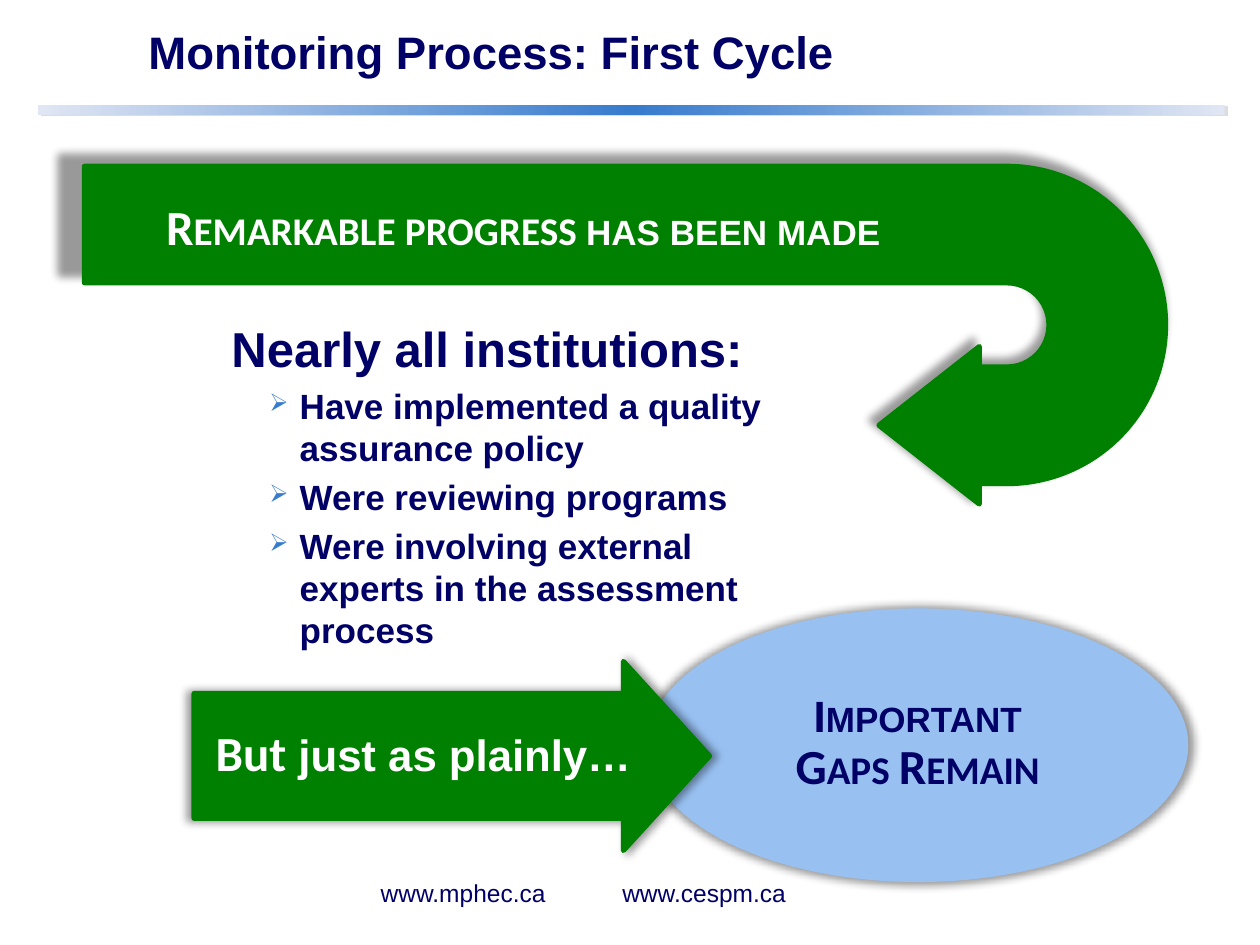
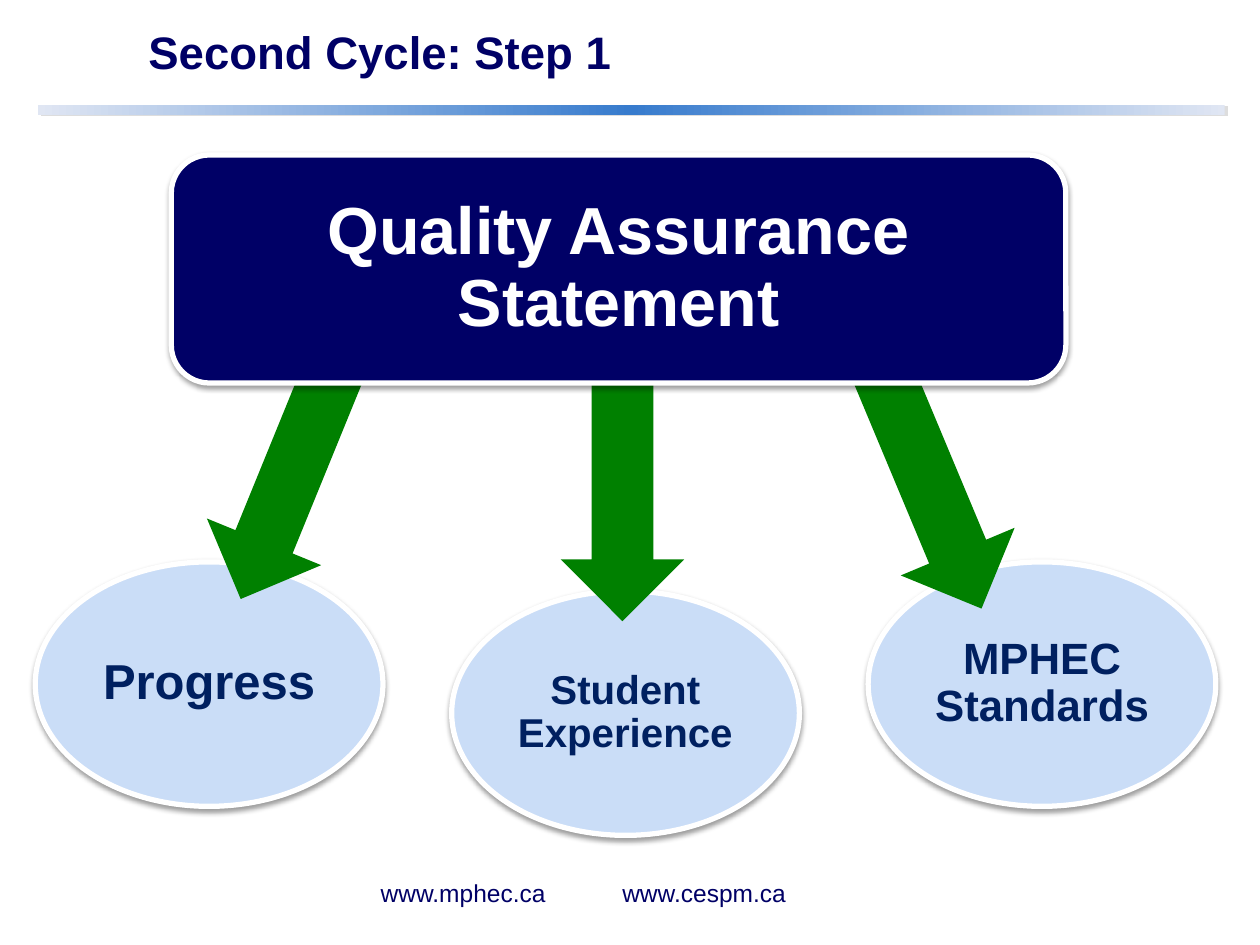
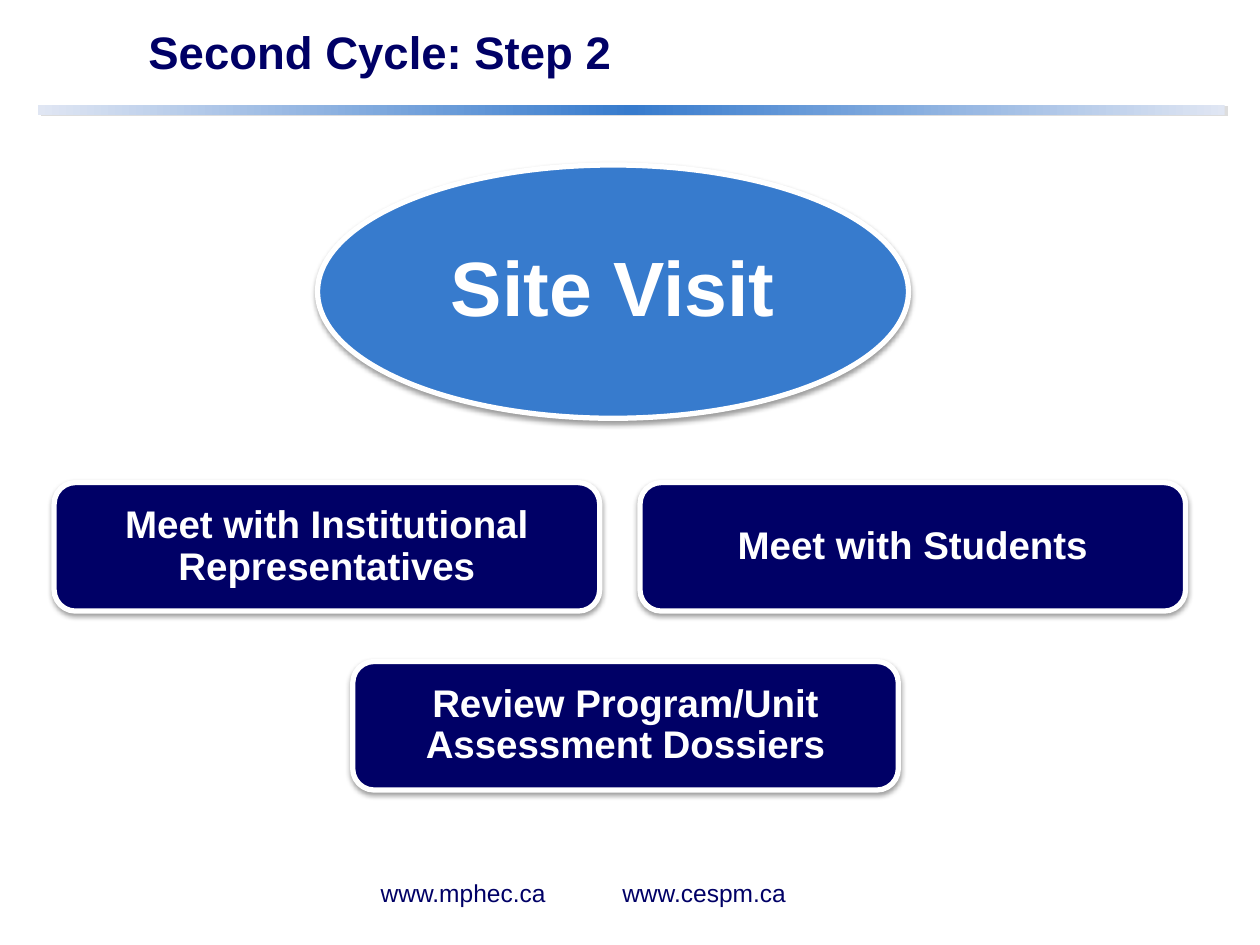
import pptx
import pptx.util
import pptx.dml.color
import pptx.enum.shapes
import pptx.enum.text
import pptx.oxml
import pptx.oxml.ns
from dataclasses import dataclass

Pt = pptx.util.Pt
Kind = pptx.enum.shapes.MSO_SHAPE
Align = pptx.enum.text.PP_ALIGN
Mid = pptx.enum.text.MSO_ANCHOR.MIDDLE
NS = pptx.oxml.ns.nsdecls("a")

WIDTH, HEIGHT = pptx.util.Inches(10), pptx.util.Inches(7.5)
COLS, ROWS = 100, 75


@dataclass(frozen=True)
class Theme:
    navy: str = "000066"
    ink: str = "002060"
    blue: str = "377BCD"
    sky: str = "98C1F2"
    pale: str = "CADDF7"
    mist: str = "E0E6F3"
    green: str = "008000"
    white: str = "FFFFFF"
    sans: str = "Arial"
    alt: str = "Calibri"
    title: int = 26
    lead: int = 28
    body: int = 20
    call: int = 25
    box: int = 22
    foot: int = 14
    edge: int = 3
    tight: float = 0.9


T = Theme()
# Shadows: colour, opacity %, blur pt, distance pt, angle, scale %
GLOW = ("000000", 40, 5, 0, 0, 102)
DROP = ("000000", 38, 3.1, 1.6, 90, 100)
BAND = ("DDDDDD", 100, 0, 2.2, 27, 100)


# --- basics ---
def rgb(code):
    return pptx.dml.color.RGBColor.from_string(code)


def place(left, top, wide, high):
    """Turn grid columns and rows into lengths."""
    col, row = WIDTH / COLS, HEIGHT / ROWS
    return [round(n) for n in (left * col, top * row, wide * col, high * row)]


def shade(shape, look):
    tint, alpha, blur, dist, angle, scale = look
    shape._element.spPr.append(pptx.oxml.parse_xml(
        f'<a:effectLst {NS}><a:outerShdw blurRad="{Pt(blur)}" dist="{Pt(dist)}" '
        f'dir="{angle * 60000}" sx="{scale * 1000}" sy="{scale * 1000}" '
        f'algn="ctr" rotWithShape="0"><a:srgbClr val="{tint}">'
        f'<a:alpha val="{alpha * 1000}"/></a:srgbClr></a:outerShdw></a:effectLst>'))


# --- text ---
def run(text, size, tint=T.navy, font=T.sans, bold=True, small=False):
    return text, size, tint, font, bold, small


def write(para, runs, align=Align.LEFT, space=None):
    para.alignment = align
    if space:
        para.line_spacing = space
    for text, size, tint, name, bold, small in runs:
        part = para.add_run()
        part.text = text
        font = part.font
        font.size, font.name, font.bold = Pt(size), name, bold
        font.color.rgb = rgb(tint)
        if small:
            font._element.set("cap", "small")


def fill_text(frame, paras, **style):
    frame.word_wrap = True
    for i, runs in enumerate(paras):
        para = frame.add_paragraph() if i else frame.paragraphs[0]
        write(para, runs, **style)


def label(slide, at, *paras, **style):
    frame = slide.shapes.add_textbox(*place(*at)).text_frame
    fill_text(frame, paras, **style)
    return frame


def bullet(frame, text):
    para = frame.add_paragraph()
    props = para._p.get_or_add_pPr()
    props.set("marL", str(pptx.util.Inches(0.74)))
    props.set("indent", str(pptx.util.Inches(-0.24)))
    for xml in (f'<a:buClr {NS}><a:srgbClr val="{T.blue}"/></a:buClr>',
                f'<a:buSzPct {NS} val="70000"/>',
                f'<a:buChar {NS} char="➢"/>'):
        props.append(pptx.oxml.parse_xml(xml))
    para.space_before = Pt(T.body * 0.2)
    write(para, [run(text, T.body)])


# --- shapes ---
def form(slide, kind, at, tint, paras=(), edge=None, look=None, turn=0, adj=()):
    shape = slide.shapes.add_shape(kind, *place(*at))
    shape.rotation = turn
    for i, value in enumerate(adj):
        shape.adjustments[i] = value
    shape.fill.solid()
    shape.fill.fore_color.rgb = rgb(tint)
    if edge:
        shape.line.color.rgb = rgb(edge)
        shape.line.width = Pt(T.edge)
        shape.line._ln.append(pptx.oxml.parse_xml(f"<a:round {NS}/>"))
    else:
        shape.line.fill.background()
    if look:
        shade(shape, look)
    else:
        shape.shadow.inherit = False
    if paras:
        frame = shape.text_frame
        frame.vertical_anchor = Mid
        frame.margin_left = frame.margin_right = pptx.util.Inches(0.05)
        fill_text(frame, paras, align=Align.CENTER, space=T.tight)
    return shape


def card(slide, kind, at, tint, lines, size, ink=T.white):
    paras = [[run(line, size, ink)] for line in lines]
    form(slide, kind, at, tint, paras, T.white, DROP)


def page(deck, title):
    """Add a slide with the shared title, band and footer."""
    slide = deck.slides.add_slide(deck.slide_layouts[6])
    band = form(slide, Kind.RECTANGLE, (3, 8.3, 94.2, 0.8), T.blue)
    band.fill.gradient()
    band.fill.gradient_angle = 0
    stops = band.fill._fill._gradFill.gsLst
    stops.clear()
    for spot, tint in ((0, T.mist), (50, T.blue), (100, T.mist)):
        stops.append(pptx.oxml.parse_xml(
            f'<a:gs {NS} pos="{spot * 1000}"><a:srgbClr val="{tint}"/></a:gs>'))
    band._element.spPr.remove(band._element.spPr.find(pptx.oxml.ns.qn("a:effectLst")))
    shade(band, BAND)
    for left, site, align in ((24.4, "www.mphec.ca", Align.RIGHT),
                              (48.4, "www.cespm.ca", Align.LEFT)):
        label(slide, (left, 69.2, 19.9, 3.4),
              [run(site, T.foot, bold=False)], align=align)
    head = label(slide, (10.8, 0.3, 86.3, 8.1), [run(title, T.title)], space=T.tight)
    head.vertical_anchor = Mid
    return slide


# --- slides ---
def first(deck):
    slide = page(deck, "Monitoring Process: First Cycle")
    body = label(slide, (15.4, 24.8, 46.5, 28.3),
                 [run("Nearly all institutions:", T.lead)], align=Align.CENTER)
    for text in ("Have implemented a quality assurance policy",
                 "Were reviewing programs",
                 "Were involving external experts in the assessment process"):
        bullet(body, text)
    form(slide, Kind.U_TURN_ARROW, (36.2, -16.3, 26.8, 85.8), T.green,
         edge=T.green, look=GLOW, turn=90, adj=(0.345, 0.233, 0.297, 0.47, 0.265))
    label(slide, (12.2, 15.1, 66.1, 5.7),
          [run("Remarkable progress ", T.lead, T.white, T.alt, small=True),
           run("has been made", T.call, T.white, small=True)])
    form(slide, Kind.OVAL, (51.6, 48.5, 42.5, 21.3), T.sky,
         [[run("Important", T.call, small=True)],
          [run("Gaps Remain", T.lead, font=T.alt, small=True)]], T.sky, GLOW)
    form(slide, Kind.RIGHT_ARROW, (15.4, 52.5, 40.9, 15), T.green,
         [[run("But", T.lead, T.white, T.alt),
           run(" just as plainly…", T.call, T.white)]],
         T.green, GLOW, adj=(0.66, 0.455))


def second(deck):
    slide = page(deck, "Second Cycle: Step 1")
    goals = ((44.6, ["Progress"], 28), (46.9, ["Student", "Experience"], 23),
             (44.6, ["MPHEC", "Standards"], 25))
    for i, (top, lines, size) in enumerate(goals):
        card(slide, Kind.OVAL, (2.8 + 33.05 * i, top, 27.6, 19.4),
             T.pale, lines, size, T.ink)
    for left, top, high, turn in ((19.1, 22.6, 25.9, 22.2), (44.5, 24.9, 24.4, 0),
                                  (68, 23.4, 25.9, 337.3)):
        form(slide, Kind.DOWN_ARROW, (left, top, 9.8, high), T.green, turn=turn)
    card(slide, Kind.ROUNDED_RECTANGLE, (13.6, 12.3, 71, 18.1), T.navy,
         ["Quality Assurance Statement"], 38)


def third(deck):
    slide = page(deck, "Second Cycle: Step 2")
    card(slide, Kind.OVAL, (25.2, 13.1, 46.9, 20.1), T.blue, ["Site Visit"], 44)
    for left, top, text in ((4.3, 38.3, "Meet with Institutional Representatives"),
                            (50.8, 38.3, "Meet with Students"),
                            (28, 52.5, "Review Program/Unit Assessment Dossiers")):
        card(slide, Kind.ROUNDED_RECTANGLE, (left, top, 43.3, 10.2), T.navy,
             [text], T.box)


def main():
    deck = pptx.Presentation()
    deck.slide_width, deck.slide_height = WIDTH, HEIGHT
    for build in (first, second, third):
        build(deck)
    deck.save("out.pptx")


if __name__ == "__main__":
    main()
